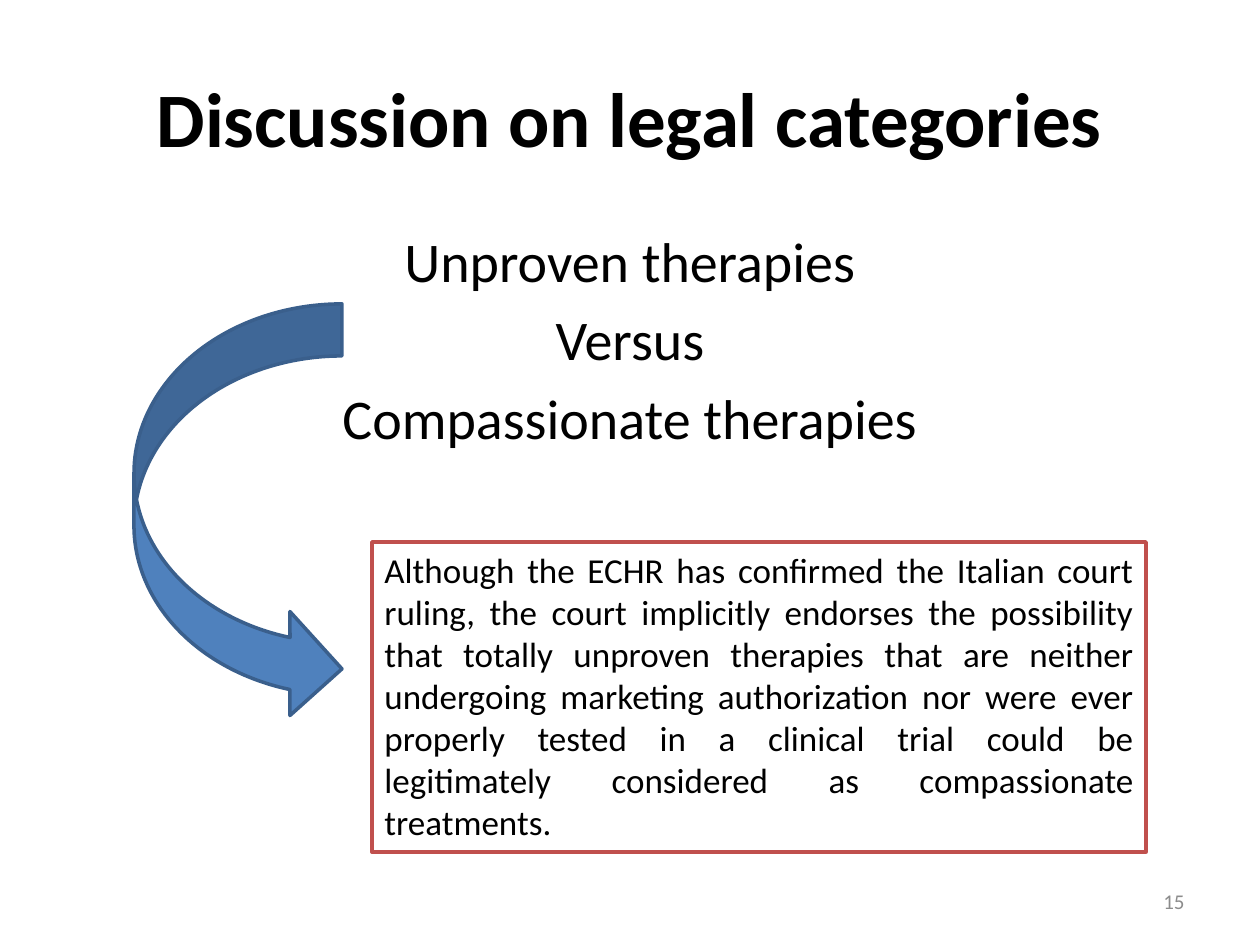
"""Build the slide on legal categories of unproven and compassionate therapies."""
from lxml.etree import SubElement
from pptx import Presentation
from pptx.dml.color import RGBColor
from pptx.enum.shapes import MSO_SHAPE as SHAPE
from pptx.enum.text import MSO_ANCHOR as ANCHOR, MSO_AUTO_SIZE as AUTO, PP_ALIGN as ALIGN
from pptx.oxml.ns import qn
from pptx.util import Pt

TITLE = "Discussion on legal categories"
TERMS = ["Unproven therapies", "Versus", "Compassionate therapies"]
NOTE = (
    "Although the ECHR has confirmed the Italian court ruling, the court implicitly "
    "endorses the possibility that totally unproven therapies that are neither undergoing "
    "marketing authorization nor were ever properly tested in a clinical trial could be "
    "legitimately considered as compassionate treatments."
)
PAGE = "15"
COLORS = {"text": "000000", "page": "8C8C8C", "arrow": "4F81BD",
          "arrow_line": "3A5F8C", "box": "FFFFFF", "box_line": "C0504D"}
BOXES = {
    "title": (63, 38, 1134, 157),
    "body": (63, 220, 1134, 624),
    "page": (903, 876, 294, 50),
    "arrow": (134, 304, 208, 417),
    "note": (372, 542, 774, 310),
}
SCALE = 914400 / 126


def emu(px):
    return round(px * SCALE)


def rgb(name):
    return RGBColor.from_string(COLORS[name])


def place(sp, name):
    sp.left, sp.top, sp.width, sp.height = map(emu, BOXES[name])


def write(sp, lines, size, align, anchor, color="text", bold=False):
    tf = sp.text_frame
    tf.text = "\n".join(lines)
    tf.word_wrap = True
    tf.vertical_anchor = anchor
    for p in tf.paragraphs:
        p.alignment = align
        for r in p.runs:
            r.font.name = "Calibri"
            r.font.size = Pt(size)
            r.font.bold = bold
            r.font.color.rgb = rgb(color)


def add_outlined(slide, kind, name, fill, line):
    sp = slide.shapes.add_shape(kind, *map(emu, BOXES[name]))
    sp.shadow.inherit = False
    sp.fill.solid()
    sp.fill.fore_color.rgb = rgb(fill)
    sp.line.color.rgb = rgb(line)
    sp.line.width = Pt(2)
    return sp


def remove_bullets(tf):
    for p in tf.paragraphs:
        pPr = p._p.get_or_add_pPr()
        pPr.set("marL", "0")
        pPr.set("indent", "0")
        SubElement(pPr, qn("a:buNone"))


def main():
    prs = Presentation()
    prs.slide_width, prs.slide_height = emu(1260), emu(945)
    slide = prs.slides.add_slide(prs.slide_layouts[1])

    title, body = slide.placeholders
    place(title, "title")
    write(title, [TITLE], 44, ALIGN.CENTER, ANCHOR.MIDDLE, bold=True)
    place(body, "body")
    write(body, TERMS, 32, ALIGN.CENTER, ANCHOR.TOP)
    remove_bullets(body.text_frame)

    page = slide.shapes.add_textbox(*map(emu, BOXES["page"]))
    write(page, [PAGE], 12, ALIGN.RIGHT, ANCHOR.MIDDLE, "page")

    add_outlined(slide, SHAPE.CURVED_RIGHT_ARROW, "arrow", "arrow", "arrow_line")
    note = add_outlined(slide, SHAPE.RECTANGLE, "note", "box", "box_line")
    write(note, [NOTE], 20, ALIGN.JUSTIFY, ANCHOR.TOP)
    note.text_frame.auto_size = AUTO.SHAPE_TO_FIT_TEXT

    prs.save("out.pptx")


if __name__ == "__main__":
    main()
